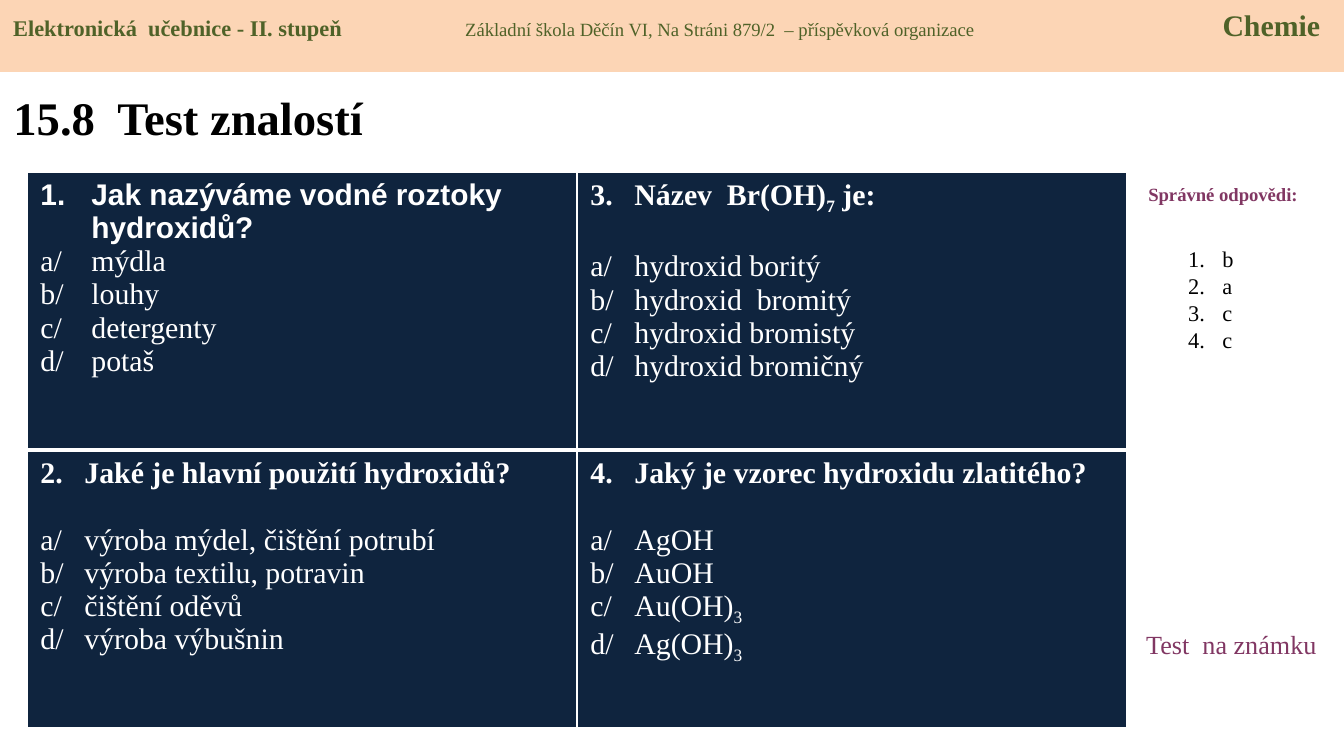
from pptx import Presentation
from pptx.dml.color import RGBColor
from pptx.enum.shapes import MSO_SHAPE as Shape
from pptx.enum.text import MSO_ANCHOR as Anchor, PP_ALIGN as Align
from pptx.oxml import parse_xml
from pptx.oxml.ns import nsdecls
from pptx.util import Pt

PX = 6804  # EMU per px
SERIF = "Times New Roman"
WHITE, BLACK, NAVY, PEACH = "FFFFFF", "000000", "0F243E", "FCD5B5"
GREEN, PLUM = "4F6228", "813763"


def style(target, size, color, bold=False, name=SERIF):
    font = target.font
    font.size, font.bold, font.name = Pt(size), bold, name
    font.color.rgb = RGBColor.from_string(color)


def hang(paragraph, indent, numbered=False):
    properties = paragraph._p.get_or_add_pPr()
    properties.set("marL", str(indent * PX))
    properties.set("indent", str(-indent * PX))
    if numbered:
        properties.append(parse_xml(f'<a:buFont {nsdecls("a")} typeface="+mj-lt"/>'))
        properties.append(parse_xml(f'<a:buAutoNum {nsdecls("a")} type="arabicPeriod"/>'))


presentation = Presentation()
presentation.slide_width, presentation.slide_height = 1344 * PX, 756 * PX
slide = presentation.slides.add_slide(presentation.slide_layouts[5])

# Title
title = slide.shapes.title
title.left, title.top, title.width, title.height = 0, 77 * PX, 445 * PX, 79 * PX
title.text_frame.vertical_anchor = Anchor.MIDDLE
paragraph = title.text_frame.paragraphs[0]
paragraph.text = "15.8  Test znalostí"
paragraph.alignment = Align.LEFT
style(paragraph, 25, BLACK, True)

# Header band: one line, set out with tab stops
band = slide.shapes.add_shape(Shape.RECTANGLE, 0, 0, 1344 * PX, 72 * PX)
band.shadow.inherit = False
band.fill.solid()
band.fill.fore_color.rgb = RGBColor.from_string(PEACH)
band.line.fill.background()
band.text_frame.vertical_anchor = Anchor.TOP
paragraph = band.text_frame.paragraphs[0]
paragraph.alignment = Align.LEFT
paragraph._p.get_or_add_pPr().append(parse_xml(
    f'<a:tabLst {nsdecls("a")}><a:tab pos="{452 * PX}" algn="l"/>'
    f'<a:tab pos="{1307 * PX}" algn="r"/></a:tabLst>'))
for text, size, bold in [
    ("Elektronická  učebnice - II. stupeň", 12, True),
    ("\tZákladní škola Děčín VI, Na Stráni 879/2  – příspěvková organizace", 10, False),
    ("\tChemie", 16, True),
]:
    run = paragraph.add_run()
    run.text = text
    style(run, size, GREEN, bold)

# Questions: underscores enclose subscripts
questions = [
    [["Jak nazýváme vodné roztoky hydroxidů?",
      "a/\tmýdla", "b/\tlouhy", "c/\tdetergenty", "d/\tpotaš"],
     ["3.\tNázev  Br(OH)_7_ je:", "a/\thydroxid boritý", "b/\thydroxid  bromitý",
      "c/\thydroxid bromistý", "d/\thydroxid bromičný"]],
    [["2.\tJaké je hlavní použití hydroxidů?", "a/\tvýroba mýdel, čištění potrubí",
      "b/\tvýroba textilu, potravin", "c/\tčištění oděvů", "d/\tvýroba výbušnin"],
     ["4.\tJaký je vzorec hydroxidu zlatitého?", "a/\tAgOH", "b/\tAuOH",
      "c/\tAu(OH)_3_", "d/\tAg(OH)_3_"]],
]
table = slide.shapes.add_table(2, 2, 27 * PX, 172 * PX, 1100 * PX, 556 * PX).table
table.first_row = table.horz_banding = False
for row, cells in enumerate(questions):
    for column, lines in enumerate(cells):
        cell = table.cell(row, column)
        cell.fill.solid()
        cell.fill.fore_color.rgb = RGBColor.from_string(NAVY)
        middle_edge = "B" if row == 0 else "T"
        for position, edge in enumerate("LRTB"):
            width = Pt(3 if edge == middle_edge else 1)
            cell._tc.get_or_add_tcPr().insert(position, parse_xml(
                f'<a:ln{edge} {nsdecls("a")} w="{width}"><a:solidFill>'
                f'<a:srgbClr val="{WHITE}"/></a:solidFill></a:ln{edge}>'))
        first_cell = row == column == 0
        frame = cell.text_frame
        for number, line in enumerate(lines):
            heading = number == 0
            paragraph = frame.paragraphs[0] if heading else frame.add_paragraph()
            hang(paragraph, 51 if first_cell else 44, first_cell and heading)
            if number == 1 and not first_cell:
                paragraph.space_before = Pt(18)
            style(paragraph, 16, WHITE, heading, "Arial" if first_cell and heading else SERIF)
            for part, text in enumerate(line.split("_")):
                if text:
                    run = paragraph.add_run()
                    run.text = text
                    if part % 2:
                        run._r.get_or_add_rPr().set("baseline", "-25000")

# Answer key and note
for left, top, width, height, lines, size, color, bold, alignment in [
    (1128, 176, 190, 36, ["Správné odpovědi:"], 10, PLUM, True, Align.CENTER),
    (1175, 239, 74, 149, ["b", "a", "c", "c"], 12, BLACK, False, Align.LEFT),
    (1133, 622, 211, 46, ["Test  na známku"], 14, PLUM, False, Align.LEFT),
]:
    frame = slide.shapes.add_textbox(left * PX, top * PX, width * PX, height * PX).text_frame
    frame.word_wrap = True
    for number, line in enumerate(lines):
        paragraph = frame.paragraphs[0] if number == 0 else frame.add_paragraph()
        paragraph.text = line
        paragraph.alignment = alignment
        if len(lines) > 1:
            hang(paragraph, 34, True)
        style(paragraph, size, color, bold)

presentation.save("out.pptx")
